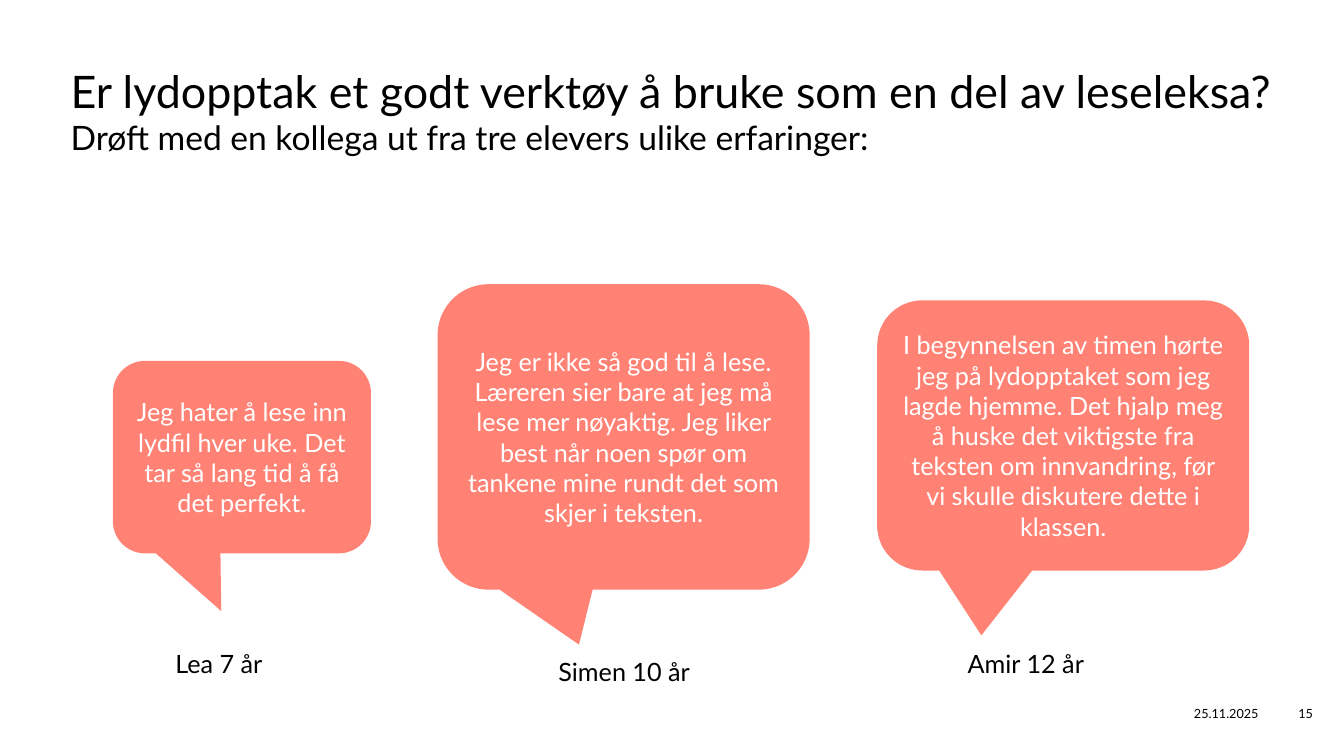
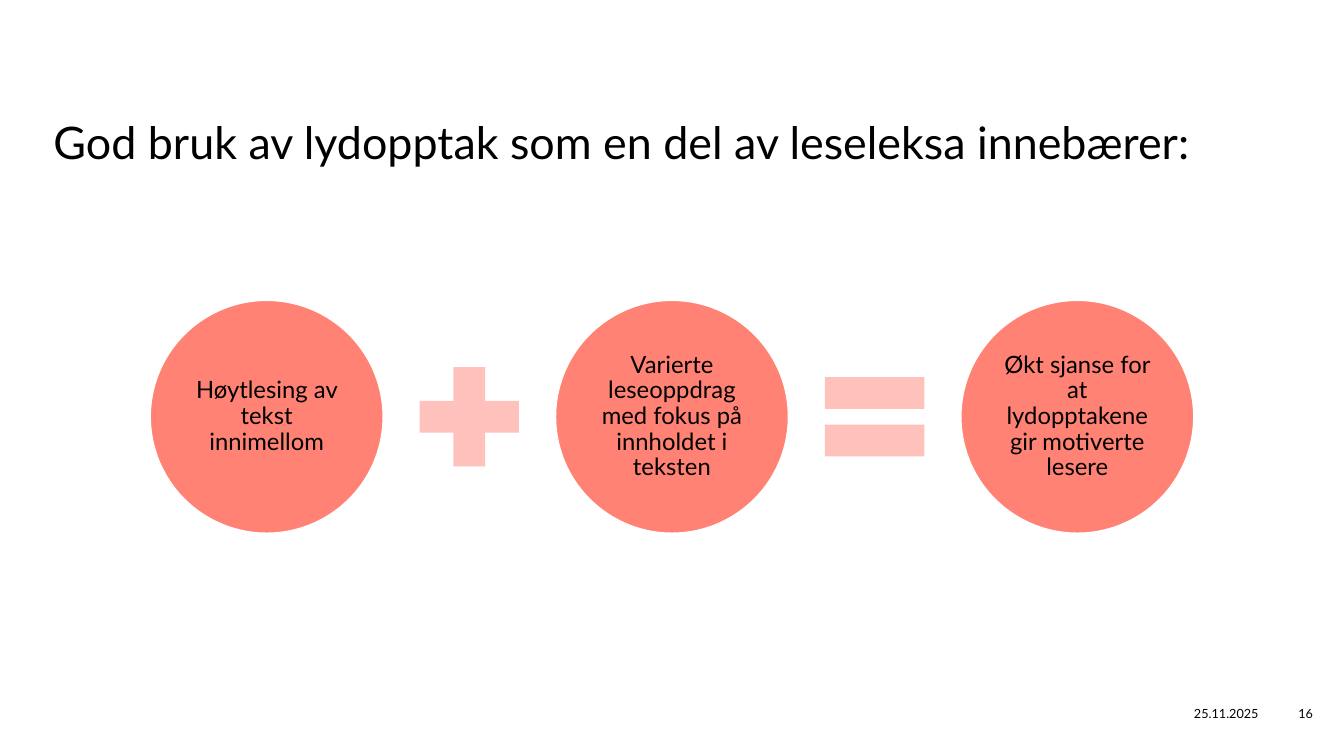
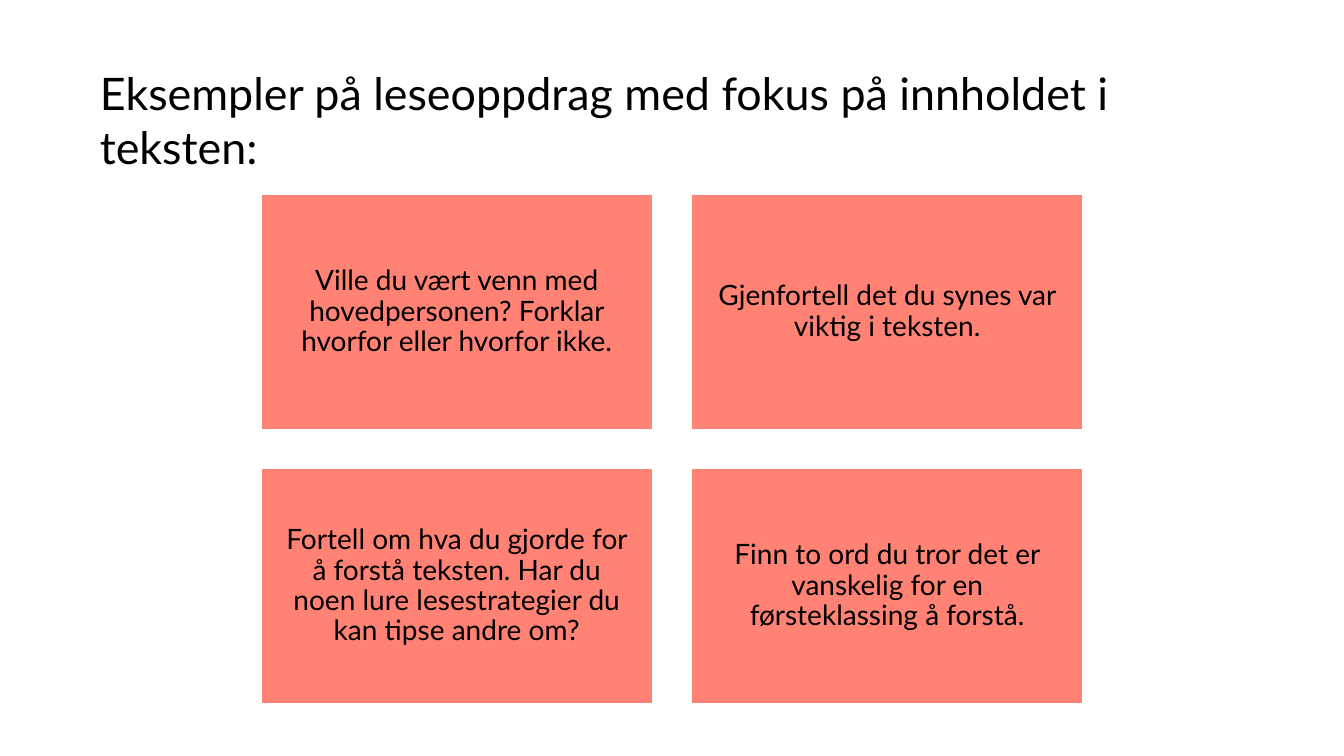
from dataclasses import dataclass

from pptx import Presentation
from pptx.dml.color import RGBColor
from pptx.enum.shapes import MSO_SHAPE
from pptx.enum.text import MSO_ANCHOR, MSO_AUTO_SIZE, PP_ALIGN
from pptx.util import Inches, Pt

CALLOUT = MSO_SHAPE.ROUNDED_RECTANGULAR_CALLOUT
CIRCLE = MSO_SHAPE.OVAL
PLUS = MSO_SHAPE.MATH_PLUS
EQUAL = MSO_SHAPE.MATH_EQUAL
CARD = MSO_SHAPE.RECTANGLE
LEFT, CENTER, RIGHT = PP_ALIGN.LEFT, PP_ALIGN.CENTER, PP_ALIGN.RIGHT
TOP, MIDDLE = MSO_ANCHOR.TOP, MSO_ANCHOR.MIDDLE
NO_AUTOFIT = MSO_AUTO_SIZE.NONE
TITLE_ONLY = 5


@dataclass(frozen=True)
class Theme:
    font: str = "Lato"
    ink: RGBColor = RGBColor(0x00, 0x00, 0x00)
    paper: RGBColor = RGBColor(0xFF, 0xFF, 0xFF)
    coral: RGBColor = RGBColor(0xFF, 0x82, 0x74)
    pale_coral: RGBColor = RGBColor(0xFF, 0xC1, 0xBC)
    title: int = 32
    subtitle: int = 24
    card: int = 20
    body: int = 18
    circle: int = 17
    footer: int = 9


class Deck:
    """Holds the style and the current slide."""

    def __init__(self, theme):
        self.theme = theme
        self.prs = Presentation()
        self.prs.slide_width = Inches(13.33)
        self.prs.slide_height = Inches(7.5)
        self.slide = None

    def style(self, frame, size, color, align, anchor, inset=None):
        frame.word_wrap = True
        frame.auto_size = NO_AUTOFIT
        frame.vertical_anchor = anchor
        if inset is not None:
            frame.margin_left = frame.margin_right = Inches(inset)
            frame.margin_top = frame.margin_bottom = Inches(inset)
        paragraph = frame.paragraphs[0]
        paragraph.alignment = align
        paragraph.font.name = self.theme.font
        paragraph.font.size = Pt(size)
        paragraph.font.color.rgb = color
        return paragraph

    def new_slide(self, title, left, top, width, height, subtitle=None):
        self.slide = self.prs.slides.add_slide(self.prs.slide_layouts[TITLE_ONLY])
        heading = self.slide.shapes.title
        heading.left, heading.top = Inches(left), Inches(top)
        heading.width, heading.height = Inches(width), Inches(height)
        paragraph = self.style(heading.text_frame, self.theme.title,
                               self.theme.ink, LEFT, TOP, inset=0)
        paragraph.add_run().text = title
        if subtitle:
            paragraph.add_line_break()
            second_line = paragraph.add_run()
            second_line.text = subtitle
            second_line.font.size = Pt(self.theme.subtitle)

    def text(self, words, left, top, width, height, size, align=LEFT, anchor=TOP):
        box = self.slide.shapes.add_textbox(
            Inches(left), Inches(top), Inches(width), Inches(height))
        paragraph = self.style(box.text_frame, size, self.theme.ink, align, anchor)
        paragraph.add_run().text = words

    def footer(self, date, number):
        self.text(date, 11.11, 6.88, 1.47, 0.4, self.theme.footer, RIGHT, MIDDLE)
        self.text(number, 12.57, 6.88, 0.76, 0.4, self.theme.footer, CENTER, MIDDLE)

    def shape(self, kind, left, top, width, height, fill, outlined=False):
        shape = self.slide.shapes.add_shape(
            kind, Inches(left), Inches(top), Inches(width), Inches(height))
        shape.shadow.inherit = False
        shape.fill.solid()
        shape.fill.fore_color.rgb = fill
        if outlined:
            shape.line.color.rgb = self.theme.paper
            shape.line.width = Pt(1)
        else:
            shape.line.fill.background()
        return shape

    def callout(self, words, left, top, width, height, tip):
        bubble = self.shape(CALLOUT, left, top, width, height, self.theme.coral)
        bubble.adjustments[0], bubble.adjustments[1] = tip
        paragraph = self.style(bubble.text_frame, self.theme.body,
                               self.theme.paper, CENTER, MIDDLE)
        paragraph.add_run().text = words

    def panel(self, kind, words, left, top, width, height, size, inset):
        panel = self.shape(kind, left, top, width, height, self.theme.coral, True)
        paragraph = self.style(panel.text_frame, size, self.theme.ink,
                               CENTER, MIDDLE, inset)
        paragraph.line_spacing = 0.9
        paragraph.add_run().text = words


DATE = "25.11.2025"


def pupil_experiences(deck):
    deck.new_slide("Er lydopptak et godt verktøy å bruke som en del av leseleksa?",
                   0.7, 0.63, 11.92, 2.55,
                   "Drøft med en kollega ut fra tre elevers ulike erfaringer:")
    deck.footer(DATE, "15")

    # Quotes: words, left, top, width, height, tip of the callout
    quotes = [
        ("Jeg hater å lese inn lydfil hver uke. Det tar så lang tid å få det perfekt.",
         1.12, 3.58, 2.56, 1.91, (-0.08, 0.8)),
        ("Jeg er ikke så god til å lese. Læreren sier bare at jeg må lese mer "
         "nøyaktig. Jeg liker best når noen spør om tankene mine rundt det som "
         "skjer i teksten.",
         4.34, 2.82, 3.69, 3.03, (-0.12, 0.68)),
        ("I begynnelsen av timen hørte jeg på lydopptaket som jeg lagde hjemme. "
         "Det hjalp meg å huske det viktigste fra teksten om innvandring, før vi "
         "skulle diskutere dette i klassen.",
         8.7, 2.98, 3.69, 2.68, (-0.22, 0.74)),
    ]
    for quote in quotes:
        deck.callout(*quote)

    # Pupils
    for pupil, left, top in [("Lea 7 år", 1.64, 6.38),
                             ("Simen 10 år", 5.44, 6.46),
                             ("Amir 12 år", 9.5, 6.38)]:
        deck.text(pupil, left, top, 2, 0.4, deck.theme.body)


def good_use(deck):
    deck.new_slide("God bruk av lydopptak som en del av leseleksa innebærer:",
                   0.53, 1.14, 13.19, 1.43)

    # Equation: circles with an operator between each pair
    first_left, circle_top, diameter, pitch = 1.49, 2.98, 2.31, 4.02
    operator_size = 1.34
    operator_offset = (pitch + diameter - operator_size) / 2
    operator_top = circle_top + (diameter - operator_size) / 2
    terms = [
        ("Høytlesing av tekst innimellom", PLUS),
        ("Varierte leseoppdrag med fokus på innholdet i teksten", EQUAL),
        ("Økt sjanse for at lydopptakene gir motiverte lesere", None),
    ]
    for index, (term, operator) in enumerate(terms):
        left = first_left + index * pitch
        deck.panel(CIRCLE, term, left, circle_top, diameter, diameter,
                   deck.theme.circle, 0.02)
        if operator is not None:
            deck.shape(operator, left + operator_offset, operator_top,
                       operator_size, operator_size, deck.theme.pale_coral)
    deck.footer(DATE, "16")


def reading_tasks(deck):
    deck.new_slide("Eksempler på leseoppdrag med fokus på innholdet i teksten:",
                   0.99, 0.65, 10.36, 1.43)

    # Two by two grid of tasks
    width, height, gap = 3.88, 2.33, 0.39
    tasks = [
        "Ville du vært venn med hovedpersonen? Forklar hvorfor eller hvorfor ikke.",
        "Gjenfortell det du synes var viktig i teksten.",
        "Fortell om hva du gjorde for å forstå teksten. Har du noen lure "
        "lesestrategier du kan tipse andre om?",
        "Finn to ord du tror det er vanskelig for en førsteklassing å forstå.",
    ]
    for index, task in enumerate(tasks):
        row, column = divmod(index, 2)
        deck.panel(CARD, task, 2.59 + column * (width + gap),
                   1.93 + row * (height + gap), width, height,
                   deck.theme.card, 0.2)


def main():
    deck = Deck(Theme())
    pupil_experiences(deck)
    good_use(deck)
    reading_tasks(deck)
    deck.prs.save("out.pptx")


if __name__ == "__main__":
    main()
